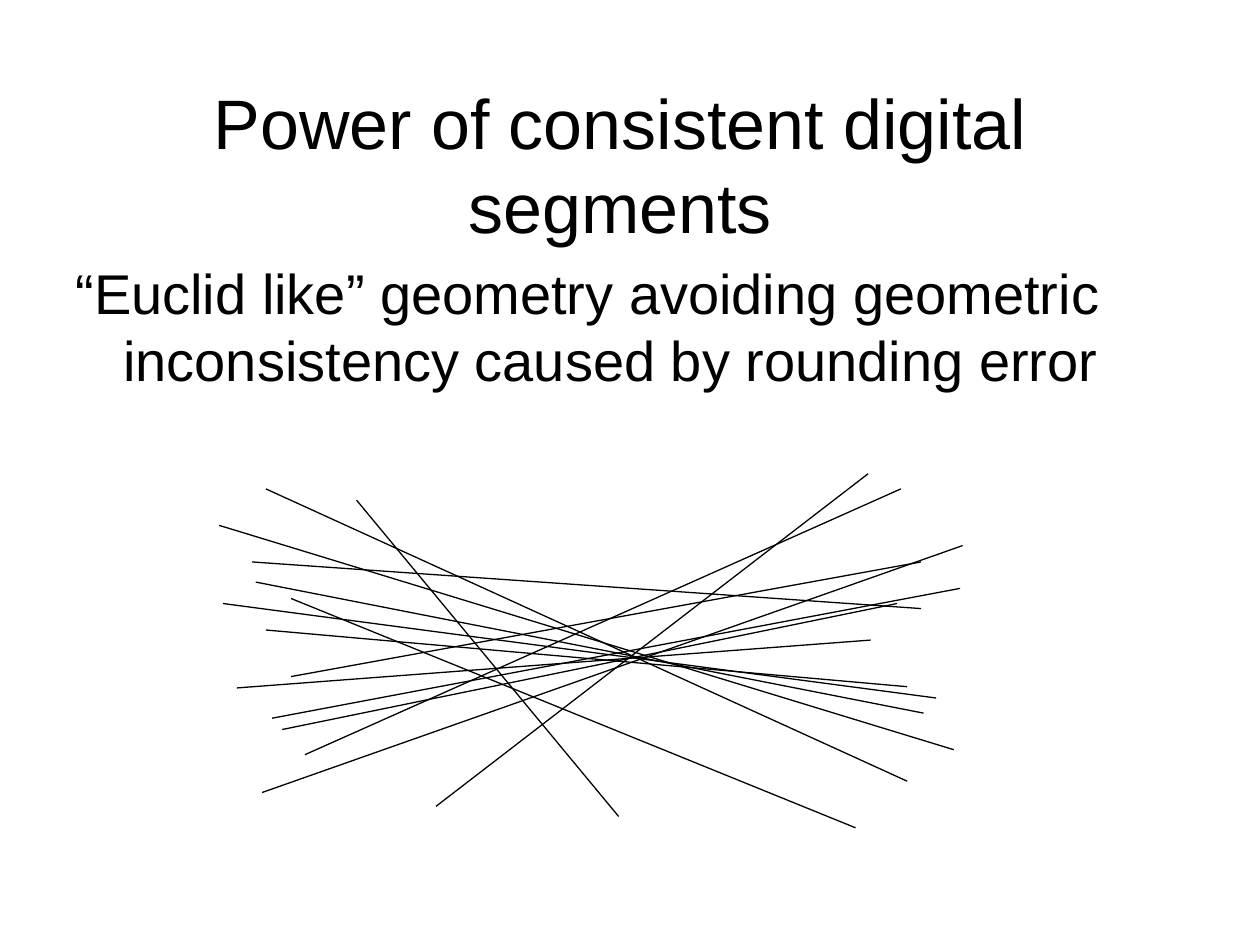
import pptx
import pptx.util
import pptx.dml.color
import pptx.enum.shapes
import pptx.enum.text
import pptx.oxml.ns
import lxml.etree

# Content (lengths in px, 100 px to the inch)
COLORS = {"ink": "000000", "paper": "FFFFFF"}
FONT = "Arial"
TITLE = "Power of consistent digital segments"
STATEMENT = ("“Euclid like” geometry avoiding geometric "
             "inconsistency caused by rounding error")
TITLE_BOX = (42, 67, 900, 125)
STATEMENT_BOX = (50, 200, 900, 460)
HANGING_INDENT = 38

# Each segment: start x, start y, end x, end y
SEGMENTS = [
    (174, 417, 757, 595),
    (211, 388, 720, 620),
    (715, 388, 242, 599),
    (200, 446, 731, 483),
    (283, 397, 491, 648),
    (231, 537, 731, 446),
    (231, 475, 679, 657),
    (689, 376, 346, 640),
    (211, 500, 720, 545),
    (216, 570, 762, 467),
    (203, 462, 733, 566),
    (224, 579, 712, 479),
    (188, 546, 691, 508),
    (177, 479, 743, 554),
    (208, 629, 764, 433),
]


def px(length):
    return pptx.util.Emu(length * 9144)


def color(name):
    return pptx.dml.color.RGBColor.from_string(COLORS[name])


def write(frame, text, size, align, anchor):
    frame.word_wrap = True
    frame.auto_size = pptx.enum.text.MSO_AUTO_SIZE.NONE
    frame.vertical_anchor = anchor
    paragraph = frame.paragraphs[0]
    paragraph.alignment = align
    run = paragraph.add_run()
    run.text = text
    run.font.size = pptx.util.Pt(size)
    run.font.name = FONT
    run.font.color.rgb = color("ink")
    return paragraph


def add_segment(slide, ends):
    segment = slide.shapes.add_connector(
        pptx.enum.shapes.MSO_CONNECTOR.STRAIGHT, *map(px, ends))
    segment.line.color.rgb = color("ink")
    segment.line.width = pptx.util.Pt(0.75)
    lxml.etree.SubElement(segment._element.spPr, pptx.oxml.ns.qn("a:effectLst"))


def main():
    deck = pptx.Presentation()
    deck.slide_width, deck.slide_height = px(1000), px(750)
    slide = deck.slides.add_slide(deck.slide_layouts.get_by_name("Title Only"))
    slide.background.fill.solid()
    slide.background.fill.fore_color.rgb = color("paper")

    # Title
    title = slide.shapes.title
    title.left, title.top, title.width, title.height = map(px, TITLE_BOX)
    write(title.text_frame, TITLE, 40, pptx.enum.text.PP_ALIGN.CENTER,
          pptx.enum.text.MSO_ANCHOR.MIDDLE)

    # Statement with a hanging indent
    statement = slide.shapes.add_textbox(*map(px, STATEMENT_BOX))
    paragraph = write(statement.text_frame, STATEMENT, 32,
                      pptx.enum.text.PP_ALIGN.LEFT,
                      pptx.enum.text.MSO_ANCHOR.TOP)
    paragraph.space_before = pptx.util.Pt(6.4)
    properties = paragraph._p.get_or_add_pPr()
    properties.set("marL", str(px(HANGING_INDENT)))
    properties.set("indent", str(px(-HANGING_INDENT)))

    # Crossing segments
    for ends in SEGMENTS:
        add_segment(slide, ends)

    deck.save("out.pptx")


if __name__ == "__main__":
    main()
